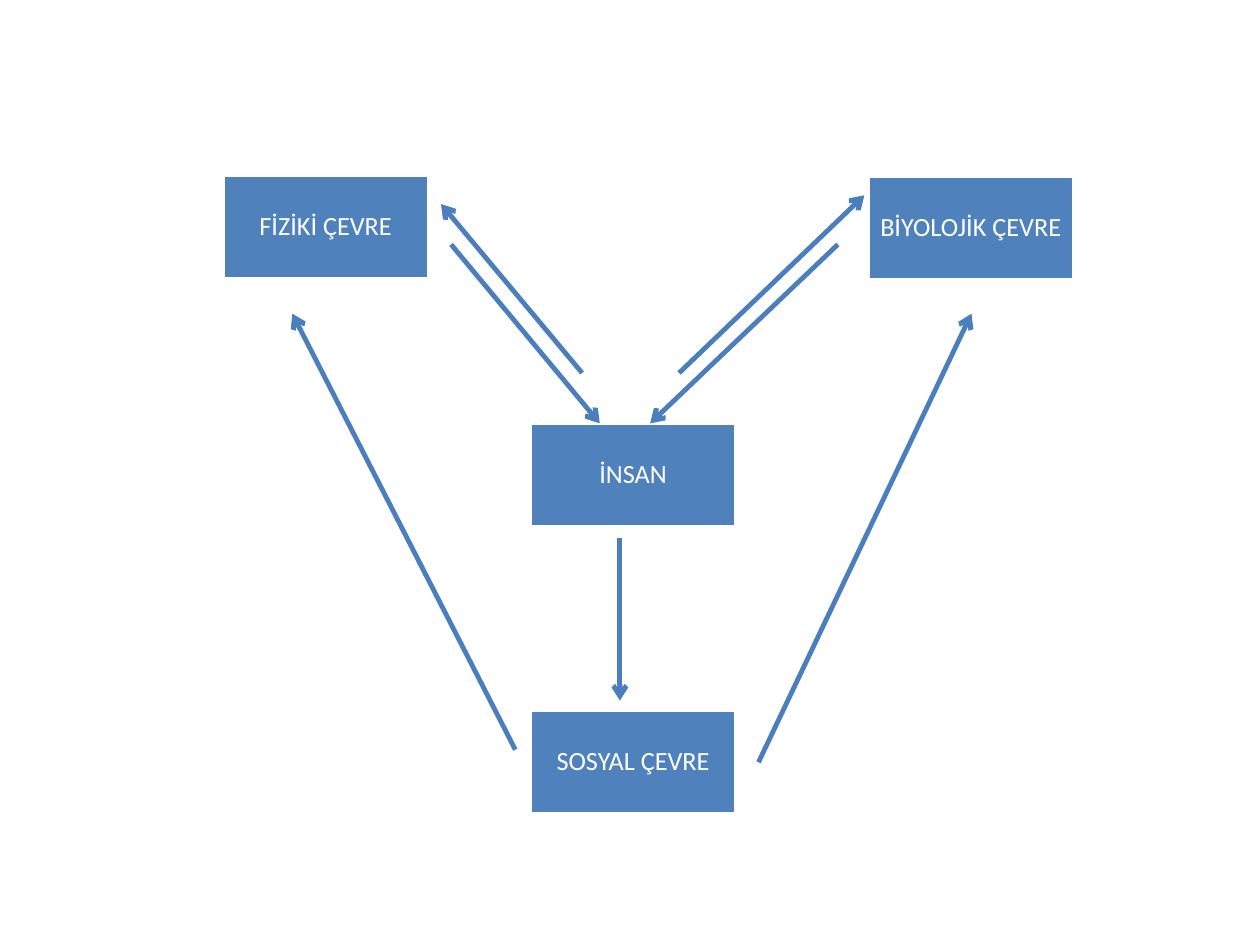
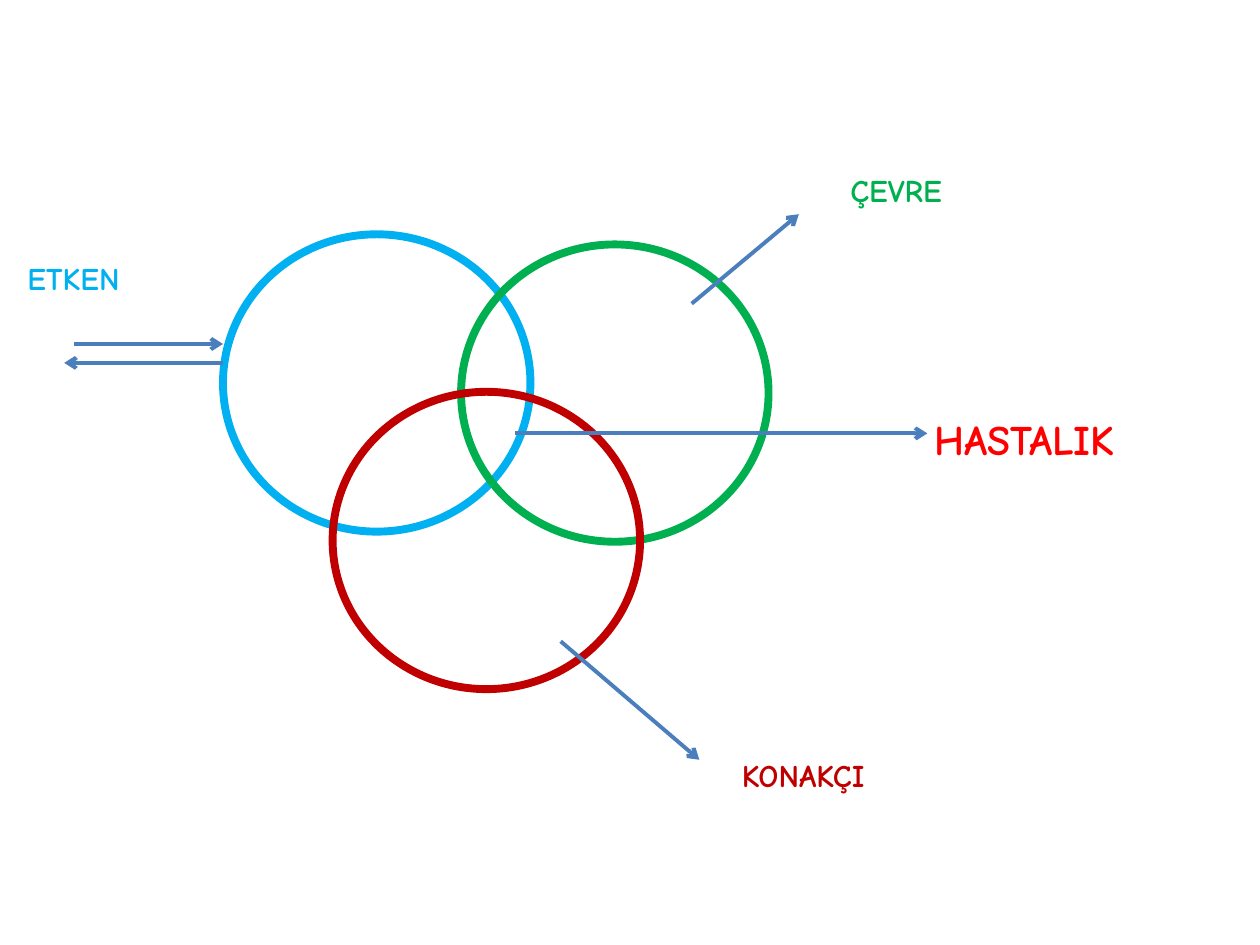
import pptx
import pptx.util
import pptx.dml.color
import pptx.enum.shapes
import pptx.enum.text
import pptx.oxml.ns
import lxml.etree

# Shared look
ARROW_BLUE = "4B7EBC"
BOX_BLUE = "4F81BD"
WHITE = "FFFFFF"
SKY, GREEN, MAROON, RED = "00B0F0", "00B050", "C00000", "FF0000"

deck = pptx.Presentation()
deck.slide_width = pptx.util.Inches(10)
deck.slide_height = pptx.util.Inches(7.5)
blank_layout = deck.slide_layouts[6]

# Both slides stand on a grid of 100 columns and 75 rows
column = deck.slide_width / 100
row = deck.slide_height / 75


def color(hex_value):
    return pptx.dml.color.RGBColor.from_string(hex_value)


def draw_arrow(slide, start, end, width):
    arrow = slide.shapes.add_connector(
        pptx.enum.shapes.MSO_CONNECTOR.STRAIGHT,
        round(start[0] * column), round(start[1] * row),
        round(end[0] * column), round(end[1] * row))
    arrow.line.color.rgb = color(ARROW_BLUE)
    arrow.line.width = pptx.util.Pt(width)
    outline = arrow.line._get_or_add_ln()
    lxml.etree.SubElement(outline, pptx.oxml.ns.qn("a:tailEnd"), type="arrow")
    properties = arrow._element.spPr
    lxml.etree.SubElement(properties, pptx.oxml.ns.qn("a:effectLst"))


# Slide 1: people and their environments
environments = deck.slides.add_slide(blank_layout)
BOX_COLUMNS, BOX_ROWS = 16.3, 8.2

for name, left, top in [
    ("FİZİKİ ÇEVRE", 17.7, 13.9),
    ("BİYOLOJİK ÇEVRE", 68.9, 14),
    ("İNSAN", 42.1, 33.6),
    ("SOSYAL ÇEVRE", 42.1, 56.4),
]:
    box = environments.shapes.add_shape(
        pptx.enum.shapes.MSO_SHAPE.RECTANGLE,
        round(left * column), round(top * row),
        round(BOX_COLUMNS * column), round(BOX_ROWS * row))
    box.shadow.inherit = False
    box.fill.solid()
    box.fill.fore_color.rgb = color(BOX_BLUE)
    box.line.color.rgb = color(WHITE)
    box.line.width = pptx.util.Pt(2)
    frame = box.text_frame
    frame.word_wrap = True
    frame.vertical_anchor = pptx.enum.text.MSO_ANCHOR.MIDDLE
    frame.margin_left = frame.margin_right = pptx.util.Inches(0.01)
    frame.margin_top = frame.margin_bottom = pptx.util.Inches(0.01)
    paragraph = frame.paragraphs[0]
    paragraph.alignment = pptx.enum.text.PP_ALIGN.CENTER
    paragraph.line_spacing = 0.9
    paragraph.space_after = pptx.util.Pt(5.25)
    run = paragraph.add_run()
    run.text = name
    run.font.name = "Calibri"
    run.font.size = pptx.util.Pt(15)
    run.font.color.rgb = color(WHITE)

# Influences between the boxes
for start, end in [
    ((40.9, 59.5), (23.2, 24.9)),
    ((60.2, 60.5), (77.1, 24.9)),
    ((49.2, 42.7), (49.2, 55.6)),
    ((53.9, 29.6), (68.6, 15.5)),
    ((66.5, 19.4), (51.6, 33.6)),
    ((46.2, 29.6), (35, 16.2)),
    ((35.8, 19.4), (47.6, 33.6)),
]:
    draw_arrow(environments, start, end, 2.75)

# Slide 2: disease where agent, environment and host overlap
disease = deck.slides.add_slide(blank_layout)
CIRCLE_COLUMNS, CIRCLE_ROWS = 24.4, 23.6

for ring_color, left, top in [
    (SKY, 17.7, 18.6),
    (GREEN, 36.6, 19.4),
    (MAROON, 26.4, 31.1),
]:
    circle = disease.shapes.add_shape(
        pptx.enum.shapes.MSO_SHAPE.OVAL,
        round(left * column), round(top * row),
        round(CIRCLE_COLUMNS * column), round(CIRCLE_ROWS * row))
    circle.shadow.inherit = False
    circle.fill.background()
    circle.line.color.rgb = color(ring_color)
    circle.line.width = pptx.util.Pt(4.5)

# Pointers from the circles to their labels
for start, end in [
    ((40.9, 34.4), (73.6, 34.4)),
    ((54.9, 24.1), (63.4, 17)),
    ((44.5, 50.9), (55.5, 60.3)),
    ((5.9, 27.3), (17.7, 27.3)),
    ((17.7, 28.8), (5.1, 28.8)),
]:
    draw_arrow(disease, start, end, 2.25)

# Labels
for name, label_color, size, left, top, columns, rows in [
    ("ÇEVRE", GREEN, 18, 66.5, 13.1, 13.4, 4),
    ("HASTALIK", RED, 24, 73.2, 32.3, 20.9, 5),
    ("KONAKÇI", MAROON, 18, 57.9, 59.5, 18.9, 4),
    ("ETKEN", SKY, 18, 1.2, 20.1, 13.4, 4),
]:
    label = disease.shapes.add_textbox(
        round(left * column), round(top * row),
        round(columns * column), round(rows * row))
    label.text_frame.word_wrap = True
    label.text_frame.auto_size = pptx.enum.text.MSO_AUTO_SIZE.SHAPE_TO_FIT_TEXT
    run = label.text_frame.paragraphs[0].add_run()
    run.text = name
    run.font.name = "Comic Neue"
    run.font.size = pptx.util.Pt(size)
    run.font.bold = True
    run.font.color.rgb = color(label_color)

deck.save("out.pptx")
